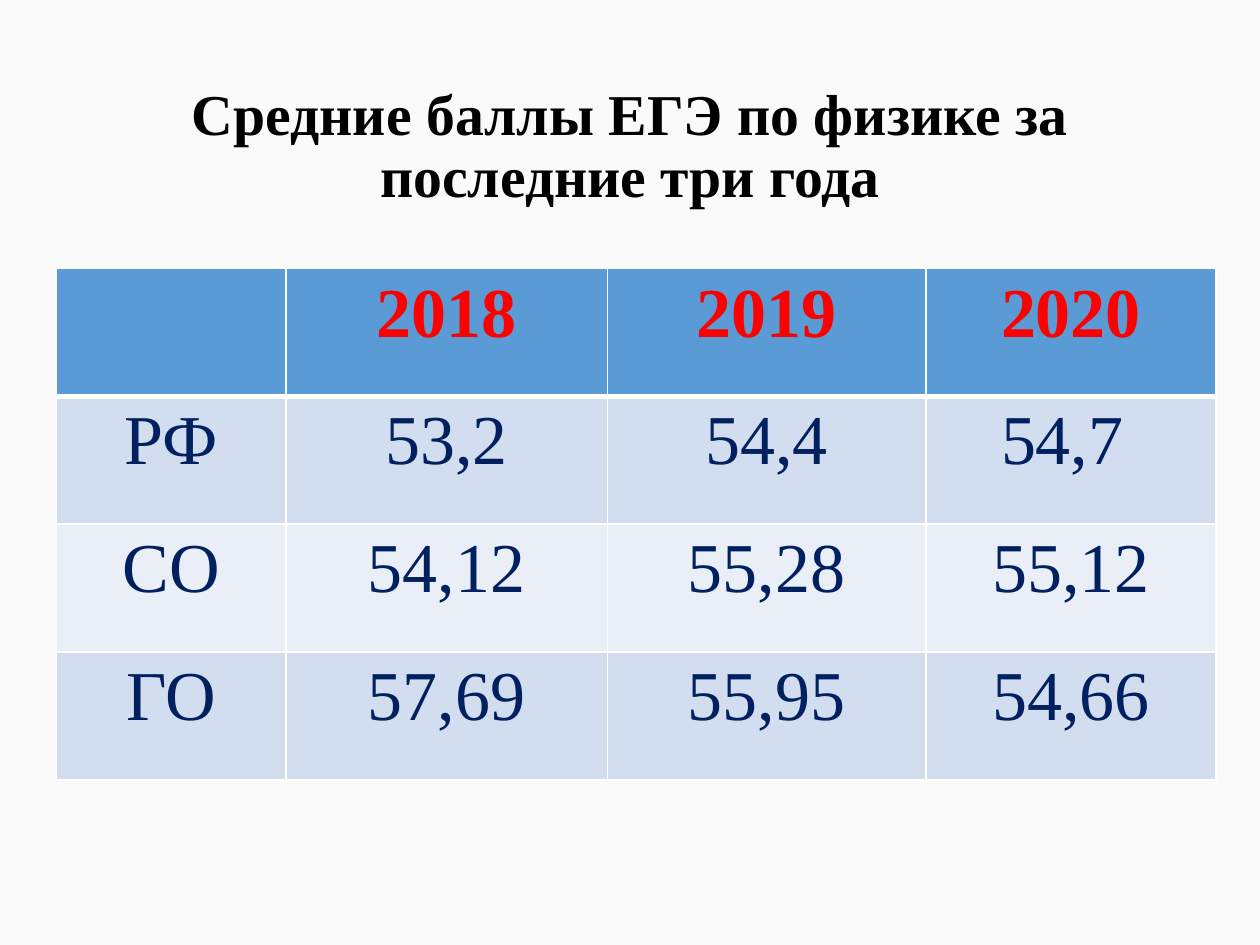
import pptx
import pptx.dml.color
import pptx.enum.text
import pptx.oxml
import pptx.oxml.ns
import pptx.util
from pptx.util import Inches

HEADER = ["", "2018", "2019", "2020"]
SCORES = [
    ["РФ", "53,2", "54,4", "54,7 "],
    ["СО", "54,12", "55,28", "55,12"],
    ["ГО", "57,69", "55,95", "54,66"],
]
COLUMN_WIDTHS = [1.82, 2.55, 2.53, 2.3]
ROW_HEIGHT = 1.015


def color(value):
    return pptx.dml.color.RGBColor.from_string(value)


def write(frame, text, font="Times New Roman", size=40, ink="002060", bold=False, spacing=None):
    para = frame.paragraphs[0]
    para.alignment = pptx.enum.text.PP_ALIGN.CENTER
    para.line_spacing = spacing
    if text:
        span = para.add_run()
        span.text = text
        span.font.name = font
        span.font.size = pptx.util.Pt(size)
        span.font.bold = bold
        span.font.color.rgb = color(ink)


def add_border(cell, side, width, ink="FFFFFF"):
    cell._tc.get_or_add_tcPr().append(pptx.oxml.parse_xml(
        f'<a:ln{side} {pptx.oxml.ns.nsdecls("a")} w="{pptx.util.Pt(width)}">'
        f'<a:solidFill><a:srgbClr val="{ink}"/></a:solidFill></a:ln{side}>'
    ))


class ScoreSlide:
    header_fill = "5B9BD5"
    band_fills = ["D2DEEF", "EAEFF7"]

    def __init__(self, deck, background):
        self.page = deck.slides.add_slide(deck.slide_layouts[5])
        fill = self.page.background.fill
        fill.solid()
        fill.fore_color.rgb = color(background)

    def title(self, text, left, top, width, height):
        box = self.page.shapes.title
        box.left, box.top = Inches(left), Inches(top)
        box.width, box.height = Inches(width), Inches(height)
        frame = box.text_frame
        frame.word_wrap = True
        frame.auto_size = pptx.enum.text.MSO_AUTO_SIZE.NONE
        frame.vertical_anchor = pptx.enum.text.MSO_ANCHOR.MIDDLE
        write(frame, text, size=33, ink="000000", bold=True, spacing=0.9)

    def table(self, rows, left, top, widths, row_height):
        table = self.page.shapes.add_table(
            len(rows), len(widths), Inches(left), Inches(top),
            Inches(sum(widths)), Inches(row_height * len(rows)),
        ).table
        for column, width in zip(table.columns, widths):
            column.width = Inches(width)
        for row_index, values in enumerate(rows):
            table.rows[row_index].height = Inches(row_height)
            for column_index, text in enumerate(values):
                self.cell(table.cell(row_index, column_index), text, row_index)

    def cell(self, cell, text, row_index):
        is_header = row_index == 0
        write(cell.text_frame, text, ink="FF0000" if is_header else "002060", bold=is_header)
        borders = {"L": 1, "R": 1, "T": 3 if row_index == 1 else 1, "B": 3 if is_header else 1}
        for side, width in borders.items():
            add_border(cell, side, width)
        cell.fill.solid()
        band = self.band_fills[(row_index - 1) % 2]
        cell.fill.fore_color.rgb = color(self.header_fill if is_header else band)


def main():
    deck = pptx.Presentation()
    deck.slide_width, deck.slide_height = Inches(10), Inches(7.5)
    slide = ScoreSlide(deck, "FAFAFA")
    slide.title("Средние баллы ЕГЭ по физике за последние три года", 0.69, 0.45, 8.62, 1.45)
    slide.table([HEADER] + SCORES, 0.45, 2.13, COLUMN_WIDTHS, ROW_HEIGHT)
    deck.save("out.pptx")


if __name__ == "__main__":
    main()
